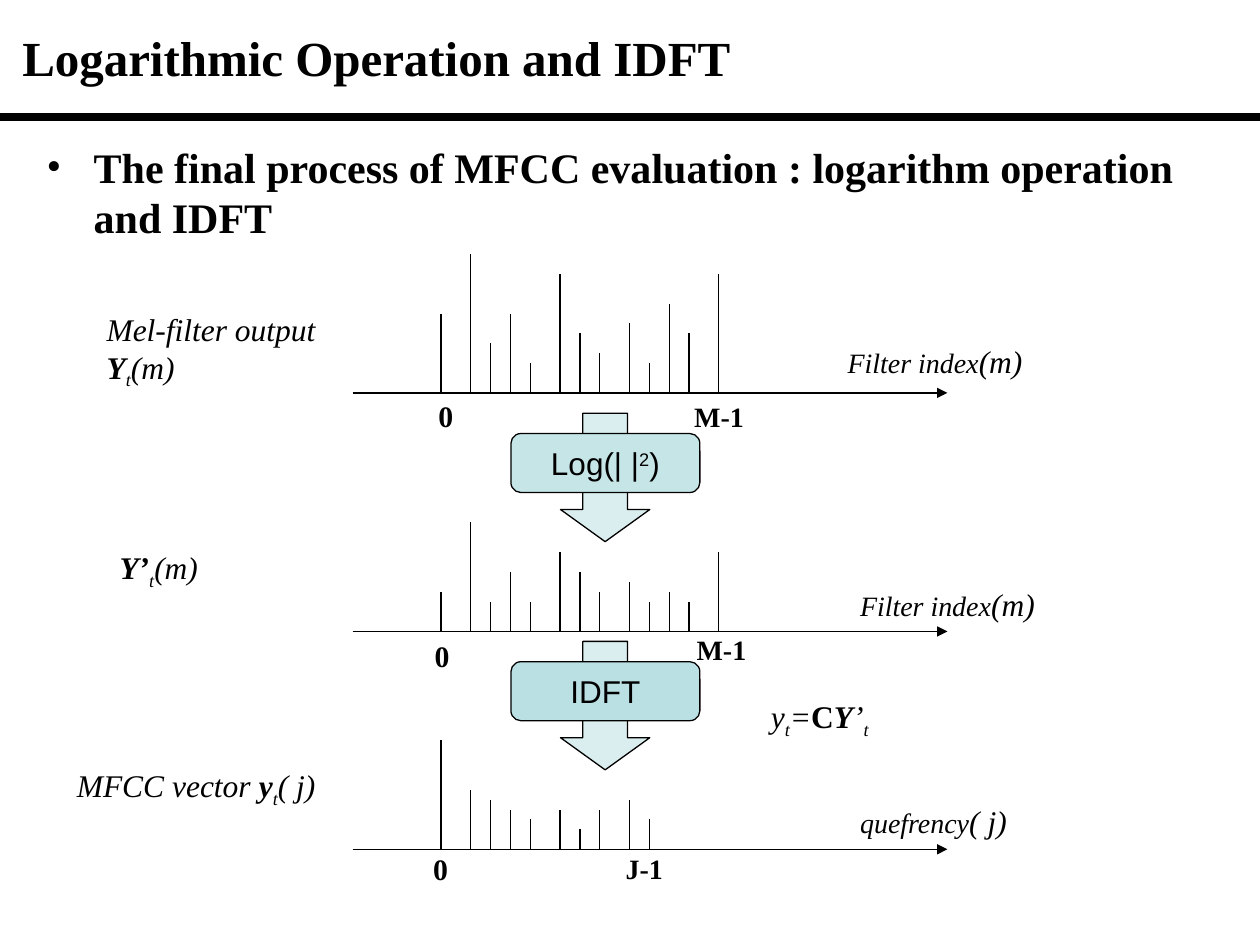
"""Build the slide on the logarithm and IDFT steps of MFCC evaluation."""
from lxml.etree import SubElement
from pptx import Presentation
from pptx.dml.color import RGBColor
from pptx.enum.shapes import MSO_CONNECTOR as CONN, MSO_SHAPE as SHAPE
from pptx.enum.text import MSO_ANCHOR as ANCHOR, PP_ALIGN as ALIGN
from pptx.oxml.ns import qn
from pptx.util import Cm, Pt

BLACK = RGBColor(0x00, 0x00, 0x00)
ARROW_FILL = RGBColor(0xD2, 0xEA, 0xEC)
LOG_FILL = RGBColor(0xC5, 0xE5, 0xE7)
IDFT_FILL = RGBColor(0xBB, 0xE0, 0xE3)
SERIF, SANS = "Times New Roman", "Arial"

TITLE = [("Logarithmic Operation and IDFT", "b", 28)]
BULLET = [("The final process of MFCC evaluation : logarithm operation and IDFT", "b", 24)]

AXIS_LEFT, AXIS_RIGHT = 7.11, 19.1
STEM_LEFT, UNIT = 8.89, 0.2
STEM_STEPS = [0, 3, 5, 7, 9, 12, 14, 16, 19, 21, 23, 25, 28]
SPECTRA = [
    (7.92, [8, 14, 5, 8, 3, 12, 6, 4, 7, 3, 9, 6, 12]),
    (12.73, [4, 11, 3, 6, 3, 8, 6, 4, 5, 3, 4, 3, 8]),
    (17.12, [11, 6, 5, 4, 3, 4, 2, 4, 5, 3]),
]

CENTER = 12.2
STEPS = [
    (8.33, LOG_FILL, [("Log(| |", "", 18), ("2", "^", 18), (")", "", 18)]),
    (12.93, IDFT_FILL, [("IDFT", "", 18)]),
]

FILTER_INDEX = [("Filter index", "i", 16), ("(m)", "i", 18)]
LABELS = [
    (1.9, 6.12, 4.93, 1.8, [("Mel-filter output ", "i", 18), ("\n", "", 18),
                            ("Y", "bi", 18), ("t", "i_", 18), ("(m)", "i", 18)]),
    (16.84, 6.78, 4.06, 1.02, FILTER_INDEX),
    (17.09, 11.66, 4.06, 1.02, FILTER_INDEX),
    (2.16, 10.92, 2.13, 1.02, [("Y’", "bi", 18), ("t", "i_", 18), ("(m)", "i", 18)]),
    (17.09, 16.05, 3.51, 1.02, [("quefrency", "i", 16), ("( j)", "i", 18)]),
    (1.3, 15.32, 5.33, 1.02, [("MFCC vector ", "i", 18), ("y", "bi", 18),
                              ("t", "i_", 18), ("( j)", "i", 18)]),
    (15.29, 13.92, 2.51, 1.02, [("y", "i", 18), ("t", "i_", 18), ("=", "i", 18),
                                ("C", "b", 18), ("Y", "bi", 18), ("’", "i", 18),
                                ("t", "i_", 18)]),
]
ZEROS = [(8.59, 7.9, 0.61), (8.51, 12.73, 0.61), (8.48, 17.02, 0.89)]
ENDS = [(13.39, 7.92, 2.21, "M-1"), (13.44, 12.62, 2.21, "M-1"), (12.29, 17.04, 1.4, "J-1")]
BASELINES = {"_": "-25000", "^": "30000"}


def apply(obj, values):
    for name, value in values.items():
        setattr(obj, name, value)


def write(tf, runs, font=SERIF, align=ALIGN.LEFT, wrap=False, anchor=ANCHOR.TOP):
    apply(tf, {"word_wrap": wrap, "vertical_anchor": anchor})
    p = tf.paragraphs[0]
    p.alignment = align
    for text, style, size in runs:
        if text == "\n":
            p.add_line_break()
            continue
        r = p.add_run()
        r.text = text
        apply(r.font, {"name": font, "size": Pt(size), "bold": "b" in style,
                       "italic": "i" in style})
        r.font.color.rgb = BLACK
        for mark, shift in BASELINES.items():
            if mark in style:
                r.font._element.set("baseline", shift)
    return p


def add_text(s, x, y, w, h, runs, **options):
    box = s.shapes.add_textbox(Cm(x), Cm(y), Cm(w), Cm(h))
    return write(box.text_frame, runs, **options)


def add_line(s, x1, y1, x2, y2, width=0.75, arrow=False):
    line = s.shapes.add_connector(CONN.STRAIGHT, Cm(x1), Cm(y1), Cm(x2), Cm(y2))
    line.line.width = Pt(width)
    line.line.color.rgb = BLACK
    if arrow:
        SubElement(line.line._get_or_add_ln(), qn("a:tailEnd"), type="triangle")
    SubElement(line._element.spPr, qn("a:effectLst"))


def add_block(s, kind, x, y, w, h, fill, adjustments):
    sp = s.shapes.add_shape(kind, Cm(x), Cm(y), Cm(w), Cm(h))
    sp.shadow.inherit = False
    sp.fill.solid()
    sp.fill.fore_color.rgb = fill
    sp.line.color.rgb = BLACK
    sp.line.width = Pt(0.75)
    for i, value in enumerate(adjustments):
        sp.adjustments[i] = value
    return sp


def add_spectrum(s, base, heights):
    add_line(s, AXIS_LEFT, base, AXIS_RIGHT, base, arrow=True)
    for step, height in zip(STEM_STEPS, heights):
        x = STEM_LEFT + step * UNIT
        add_line(s, x, base, x, base - height * UNIT)


def add_step(s, top, fill, runs):
    arrow = add_block(s, SHAPE.DOWN_ARROW, CENTER - 0.9, top, 1.8, 2.59, ARROW_FILL, [0.5, 0.36])
    color = arrow._element.spPr.find(qn("a:solidFill"))[0]
    SubElement(color, qn("a:alpha"), val="80000")
    box = add_block(s, SHAPE.ROUNDED_RECTANGLE, CENTER - 1.9, top + 0.41, 3.81, 1.19, fill, [0.17])
    write(box.text_frame, runs, font=SANS, align=ALIGN.CENTER, anchor=ANCHOR.MIDDLE)


def main():
    prs = Presentation()
    apply(prs, {"slide_width": Cm(25.4), "slide_height": Cm(19.05)})
    s = prs.slides.add_slide(prs.slide_layouts[6])

    add_line(s, 0, 2.36, 25.4, 2.36, width=4.5)
    add_text(s, 0.2, 0.2, 25, 1.9, TITLE, wrap=True, anchor=ANCHOR.MIDDLE)
    p = add_text(s, 0.69, 2.72, 23.44, 14.3, BULLET, wrap=True)
    pPr = p._p.get_or_add_pPr()
    apply_indent = {"marL": Cm(0.95), "indent": -Cm(0.95)}
    for name, value in apply_indent.items():
        pPr.set(name, str(int(value)))
    SubElement(pPr, qn("a:buFont"), typeface=SERIF)
    SubElement(pPr, qn("a:buChar"), char="•")

    for base, heights in SPECTRA:
        add_spectrum(s, base, heights)
    for top, fill, runs in STEPS:
        add_step(s, top, fill, runs)
    for x, y, w, h, runs in LABELS:
        add_text(s, x, y, w, h, runs)
    for x, y, w in ZEROS:
        add_text(s, x, y, w, 0.97, [("0", "b", 17)], wrap=True)
    for x, y, w, text in ENDS:
        add_text(s, x, y, w, 0.94, [(text, "b", 16)], wrap=True, align=ALIGN.CENTER)

    prs.save("out.pptx")


if __name__ == "__main__":
    main()
